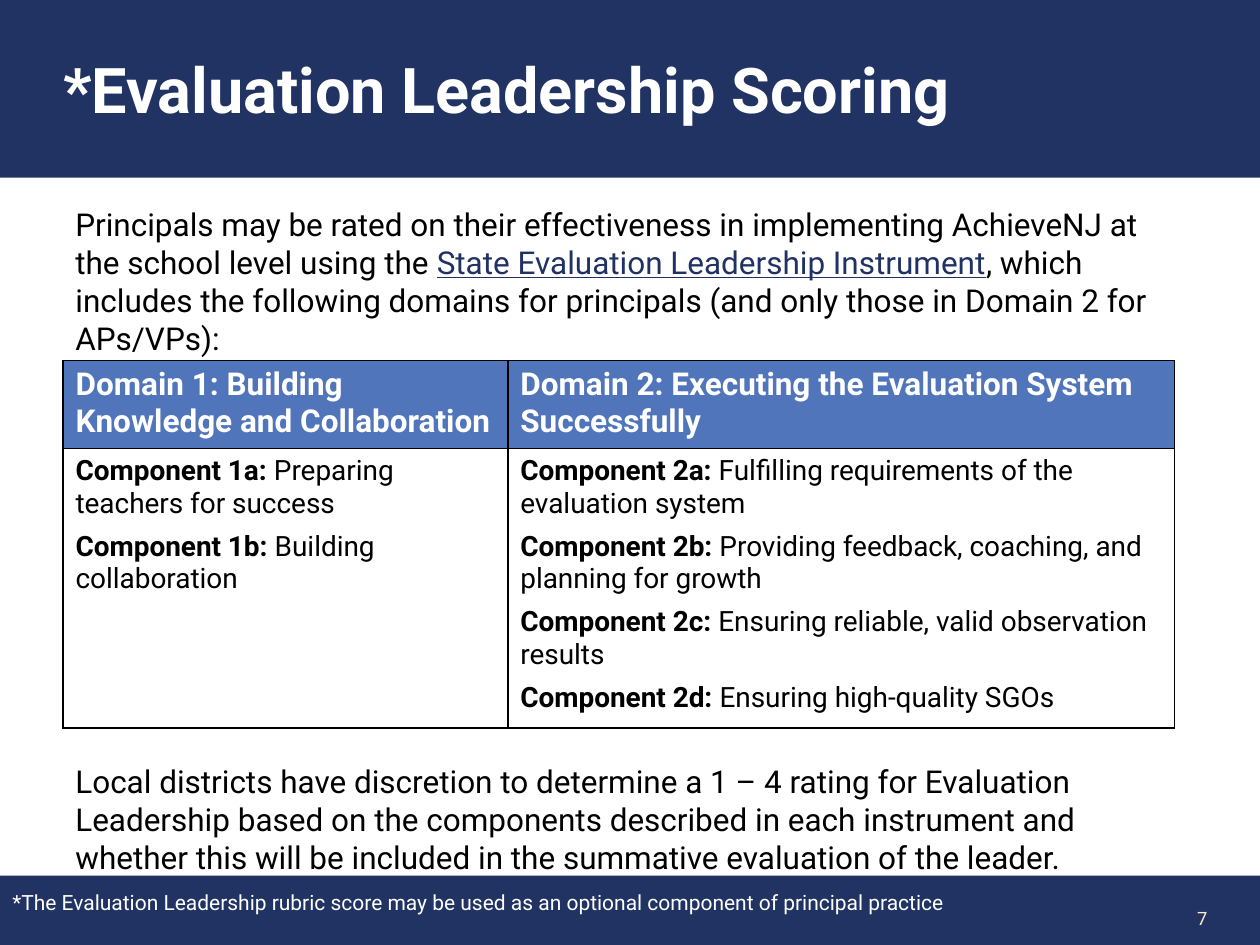
from lxml import etree
from pptx import Presentation
from pptx.dml.color import RGBColor
from pptx.enum.shapes import MSO_SHAPE
from pptx.enum.text import MSO_ANCHOR, MSO_AUTO_SIZE, PP_ALIGN
from pptx.oxml.ns import qn
from pptx.util import Pt

PX = 9144  # 100 px to the inch
FONT = "Roboto"
NAVY = RGBColor(0x21, 0x33, 0x63)
LINK = RGBColor(0x20, 0x32, 0x63)
BLUE = RGBColor(0x50, 0x75, 0xBB)
CREAM = RGBColor(0xFE, 0xEB, 0xD0)
WHITE = RGBColor(0xFF, 0xFF, 0xFF)
BLACK = RGBColor(0, 0, 0)
RECT = MSO_SHAPE.RECTANGLE
MIDDLE = MSO_ANCHOR.MIDDLE
FIXED = MSO_AUTO_SIZE.NONE
LEFT, RIGHT = PP_ALIGN.LEFT, PP_ALIGN.RIGHT

TITLE = "*Evaluation Leadership Scoring"
INTRO = [
    ("Principals may be rated on their effectiveness in implementing "
     "AchieveNJ at the school level using the ", {}),
    ("State Evaluation Leadership Instrument",
     {"color": LINK, "underline": True}),
    (", which includes the following domains for principals "
     "(and only those in Domain 2 for APs/VPs):", {}),
]
DOMAINS = [
    ("Domain 1: Building Knowledge and Collaboration", 353, [
        ("Component 1a: ", "Preparing teachers for success"),
        ("Component 1b: ", "Building collaboration"),
    ]),
    ("Domain 2: Executing the Evaluation System Successfully", 529, [
        ("Component 2a: ", "Fulfilling requirements of the evaluation system"),
        ("Component 2b: ",
         "Providing feedback, coaching, and planning for growth"),
        ("Component 2c: ", "Ensuring reliable, valid observation results"),
        ("Component 2d: ", "Ensuring high-quality SGOs"),
    ]),
]
CLOSING = ("Local districts have discretion to determine a 1 – 4 rating for "
           "Evaluation Leadership based on the components described in each "
           "instrument and whether this will be included in the summative "
           "evaluation of the leader.")
NOTE = ("*The Evaluation Leadership rubric score may be used as an optional "
        "component of principal practice")


def emu(*vals):
    return [v * PX for v in vals]


def add_run(para, text, size, color=BLACK, **form):
    run = para.add_run()
    run.text = text
    run.font.color.rgb = color
    for key, val in {"name": FONT, "size": Pt(size), **form}.items():
        setattr(run.font, key, val)


def add_text(slide, box, runs, size, align=LEFT, **frame):
    body = slide.shapes.add_textbox(*emu(*box)).text_frame
    for key, val in {"word_wrap": True, **frame}.items():
        setattr(body, key, val)
    para = body.paragraphs[0]
    para.alignment = align
    for text, form in runs:
        add_run(para, text, size, **form)


def add_title(slide, box):
    title = slide.shapes.title
    title.left, title.top, title.width, title.height = emu(*box)
    title.fill.solid()
    title.fill.fore_color.rgb = NAVY
    body = title.text_frame
    form = {"auto_size": FIXED, "word_wrap": True,
            "vertical_anchor": MIDDLE, "margin_left": 50 * PX}
    for key, val in form.items():
        setattr(body, key, val)
    para = body.paragraphs[0]
    para.alignment = LEFT
    add_run(para, TITLE, 36, WHITE, bold=True)


def add_footer(slide, box):
    left, top, width, height = box
    bar = slide.shapes.add_shape(RECT, *emu(*box))
    bar.shadow.inherit = False
    bar.fill.solid()
    bar.fill.fore_color.rgb = NAVY
    bar.line.fill.background()
    # Note and page number
    add_text(slide, (left, top + 6, 783, 30), [(NOTE, {"color": WHITE})], 12)
    add_text(slide, (left + 822, top + 14, 146, 40),
             [("7", {"color": CREAM})], 10.5, RIGHT, vertical_anchor=MIDDLE)


def style_cell(cell, color):
    props = cell._tc.get_or_add_tcPr()
    for side in ("lnL", "lnR", "lnT", "lnB"):
        line = etree.SubElement(props, qn("a:" + side), w=str(Pt(1)))
        fill = etree.SubElement(line, qn("a:solidFill"))
        etree.SubElement(fill, qn("a:srgbClr"), val=str(BLACK))
    cell.fill.solid()
    cell.fill.fore_color.rgb = color


def add_domains(slide, box):
    table = slide.shapes.add_table(2, len(DOMAINS), *emu(*box)).table
    table.horz_banding = False
    head = 68
    table.rows[0].height, table.rows[1].height = emu(head, box[3] - head)
    for col, (name, width, parts) in enumerate(DOMAINS):
        table.columns[col].width = width * PX
        top, cell = table.cell(0, col), table.cell(1, col)
        style_cell(top, BLUE)
        style_cell(cell, WHITE)
        add_run(top.text_frame.paragraphs[0], name, 18, WHITE, bold=True)
        body = cell.text_frame
        for i, (label, text) in enumerate(parts):
            para = body.add_paragraph() if i else body.paragraphs[0]
            para.space_after = Pt(6)
            add_run(para, label, 16, bold=True)
            add_run(para, text, 16, bold=False)


def main():
    deck = Presentation()
    deck.slide_width, deck.slide_height = emu(1000, 750)
    slide = deck.slides.add_slide(deck.slide_layouts[5])
    add_title(slide, (0, 0, 1000, 141))
    add_footer(slide, (0, 695, 1000, 55))
    add_text(slide, (50, 158, 900, 130), INTRO, 18)
    add_domains(slide, (50, 286, 882, 284))
    add_text(slide, (50, 600, 883, 101), [(CLOSING, {})], 18)
    deck.save("out.pptx")


if __name__ == "__main__":
    main()
